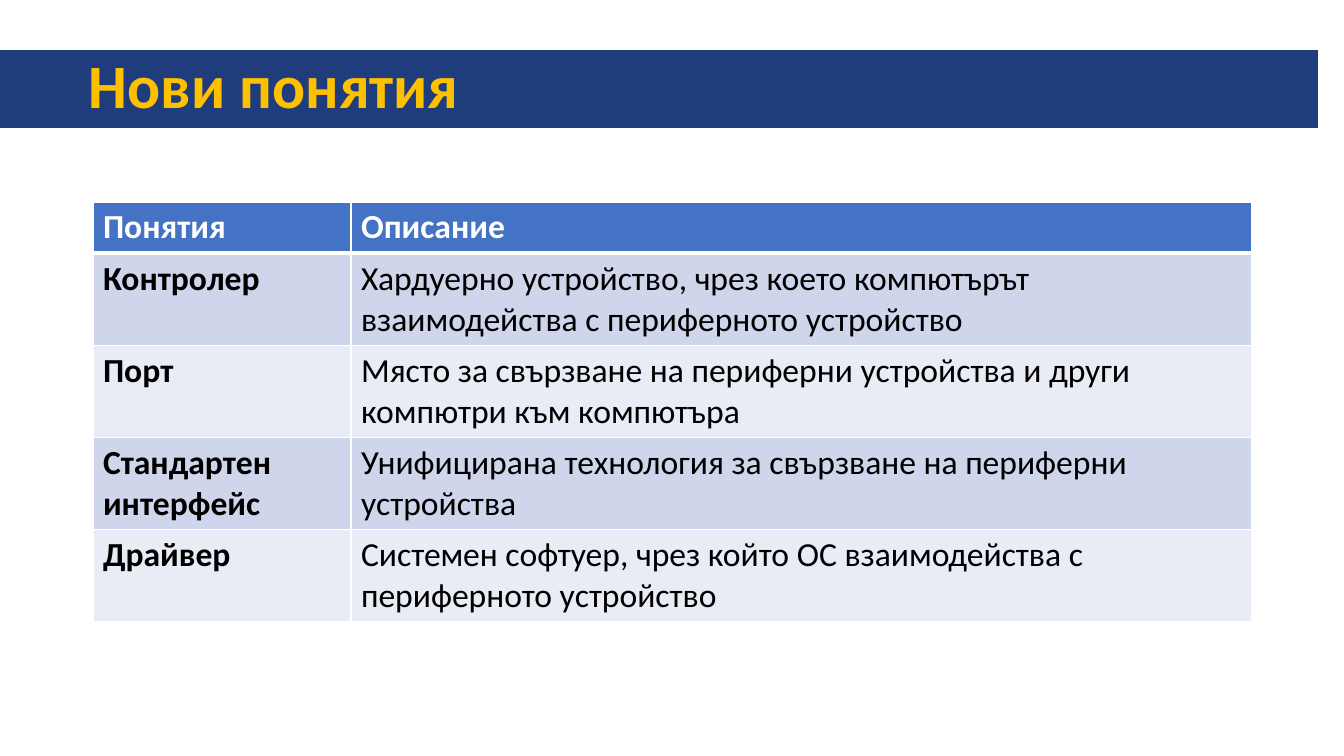
from dataclasses import dataclass

from lxml import etree
from pptx import Presentation
from pptx.dml.color import RGBColor
from pptx.enum.shapes import MSO_SHAPE
from pptx.enum.text import MSO_ANCHOR, PP_ALIGN
from pptx.oxml.ns import qn
from pptx.util import Pt

RECTANGLE = MSO_SHAPE.RECTANGLE
MIDDLE = MSO_ANCHOR.MIDDLE
LEFT = PP_ALIGN.LEFT


@dataclass(frozen=True)
class Theme:
    font: str = "Calibri"
    title_size: int = 44
    table_size: int = 24
    band: str = "1F3D7C"
    title: str = "FFC000"
    header: str = "4472C4"
    stripes: tuple = ("CFD5EA", "E9EBF5")
    light: str = "FFFFFF"
    dark: str = "000000"


theme = Theme()


def px(pixels):
    return round(pixels * 914400 / 100.8)


def style(paragraph, size, color, bold):
    paragraph.alignment = LEFT
    font = paragraph.font
    font.name, font.size, font.bold = theme.font, Pt(size), bold
    font.color.rgb = RGBColor.from_string(color)


deck = Presentation()
deck.slide_width, deck.slide_height = px(1344), px(756)
page = deck.slides.add_slide(deck.slide_layouts[6])

# Title band
band = page.shapes.add_shape(RECTANGLE, px(0), px(50), px(1318), px(78))
band.shadow.inherit = False
band.fill.solid()
band.fill.fore_color.rgb = RGBColor.from_string(theme.band)
band.line.fill.background()
frame = band.text_frame
frame.word_wrap = True
frame.vertical_anchor = MIDDLE
frame.margin_left = px(89)
frame.text = "Нови понятия"
title = frame.paragraphs[0]
title.line_spacing = 0.9
style(title, theme.title_size, theme.title, True)

# Table of terms
rows = [
    ("Понятия", "Описание"),
    ("Контролер", "Хардуерно устройство, чрез което компютърът "
                  "взаимодейства с периферното устройство"),
    ("Порт", "Място за свързване на периферни устройства и други "
             "компютри към компютъра"),
    ("Стандартен\nинтерфейс", "Унифициранa технология за свързване на "
                              "периферни устройства"),
    ("Драйвер", "Системен софтуер, чрез който ОС взаимодейства с "
                "периферното устройство"),
]
column_widths = [258, 901]
row_heights = [50] + [92] * (len(rows) - 1)
table = page.shapes.add_table(
    len(rows), len(column_widths), px(93), px(202),
    px(sum(column_widths)), px(sum(row_heights))).table
for column, width in zip(table.columns, column_widths):
    column.width = px(width)
for row, height in zip(table.rows, row_heights):
    row.height = px(height)

for r, texts in enumerate(rows):
    is_header = r == 0
    fill = theme.header if is_header else theme.stripes[(r - 1) % 2]
    color = theme.light if is_header else theme.dark
    for c, text in enumerate(texts):
        cell = table.cell(r, c)
        cell.text = text
        for paragraph in cell.text_frame.paragraphs:
            style(paragraph, theme.table_size, color, is_header or c == 0)

        # Borders, thicker between the header and the first term
        properties = cell._tc.get_or_add_tcPr()
        for side in ("lnL", "lnR", "lnT", "lnB"):
            thick = (r, side) in ((0, "lnB"), (1, "lnT"))
            line = etree.SubElement(properties, qn(f"a:{side}"),
                                    w=str(Pt(3 if thick else 1)))
            solid = etree.SubElement(line, qn("a:solidFill"))
            etree.SubElement(solid, qn("a:srgbClr"), val=theme.light)
        cell.fill.solid()
        cell.fill.fore_color.rgb = RGBColor.from_string(fill)

deck.save("out.pptx")
